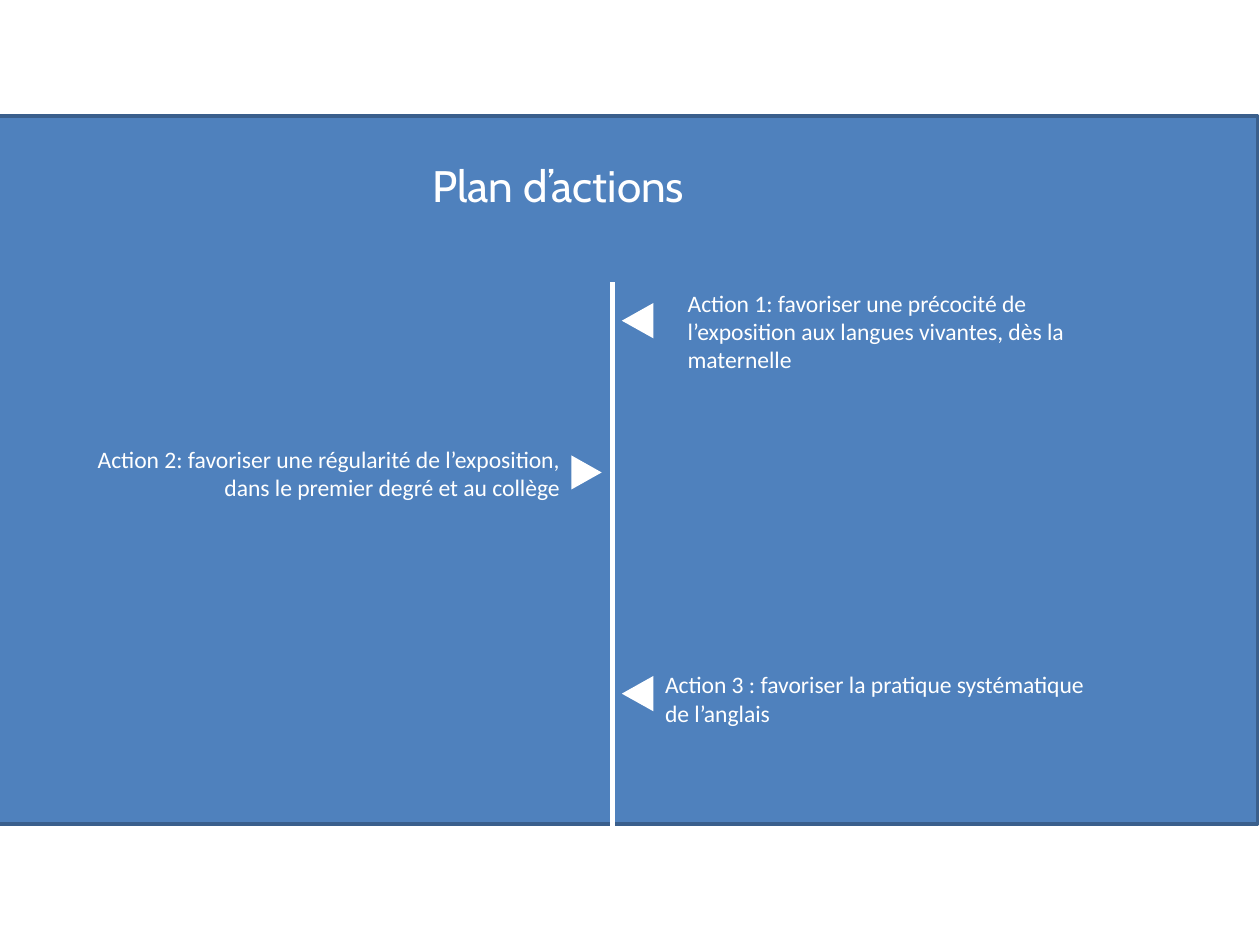
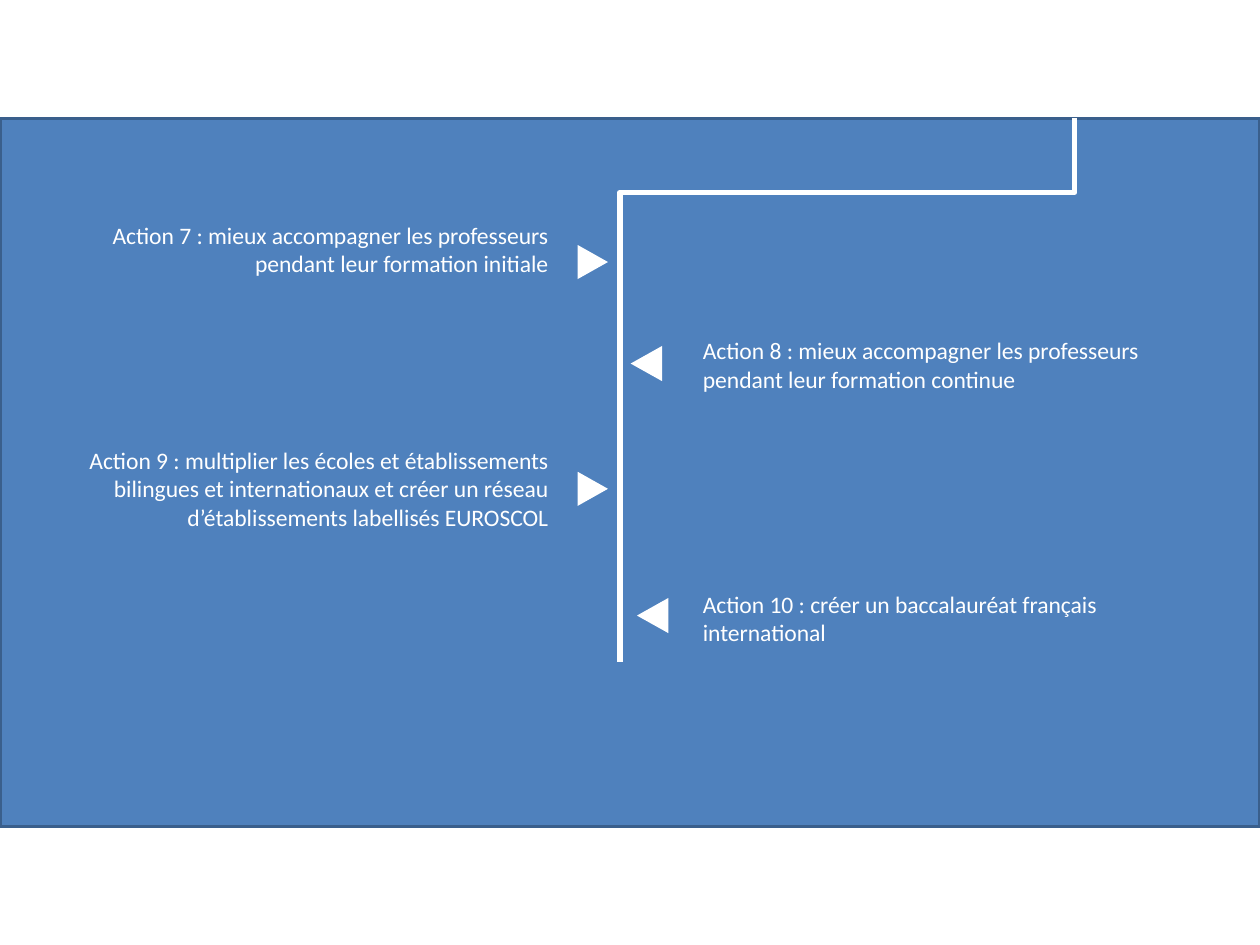
from dataclasses import dataclass

from lxml import etree
from pptx import Presentation
from pptx import util as u
from pptx.dml.color import RGBColor
from pptx.enum import shapes, text
from pptx.oxml.ns import qn

PX = 9144


@dataclass(frozen=True)
class Theme:
    """Colours, fonts and sizes shared by the slides."""
    panel: RGBColor = RGBColor(0x4F, 0x81, 0xBD)
    edge: RGBColor = RGBColor(0x3A, 0x5F, 0x8C)
    ink: RGBColor = RGBColor(0xFF, 0xFF, 0xFF)
    title_font: str = "Cabin"
    body_font: str = "Calibri"
    title_size: float = 25.2
    body_size: float = 13.5
    edge_width: int = 2
    spine_width: int = 3


class Timeline:
    """A deck of action timelines and the slide being drawn."""

    def __init__(self, theme):
        self.theme = theme
        self.deck = Presentation()
        self.deck.slide_width, self.deck.slide_height = 1000 * PX, 750 * PX
        self.page = None

    def start(self, left, top, titled=False):
        """Add a slide with its blue panel."""
        self.page = self.deck.slides.add_slide(self.deck.slide_layouts[5 if titled else 6])
        panel = self.shape(shapes.MSO_SHAPE.RECTANGLE, left, top, 1000, 562, self.theme.panel)
        panel.line.color.rgb = self.theme.edge
        panel.line.width = u.Pt(self.theme.edge_width)

    def shape(self, kind, left, top, width, height, fill):
        """Add a flat preset shape without outline."""
        item = self.page.shapes.add_shape(kind, left * PX, top * PX, width * PX, height * PX)
        item.shadow.inherit = False
        item.fill.solid()
        item.fill.fore_color.rgb = fill
        item.line.fill.background()
        return item

    def label(self, box, words, font, size, align):
        """Fill a text frame with one styled paragraph."""
        box.text_frame.word_wrap = True
        para = box.text_frame.paragraphs[0]
        para.alignment = align
        span = para.add_run()
        span.text = words
        span.font.name, span.font.size = font, u.Pt(size)
        span.font.color.rgb = self.theme.ink

    def title(self, words, left, top, width, height):
        """Place the title above the panel."""
        box = self.page.shapes.title
        box.left, box.top, box.width, box.height = (n * PX for n in (left, top, width, height))
        box.text_frame.vertical_anchor = text.MSO_ANCHOR.MIDDLE
        self.label(box, words, self.theme.title_font, self.theme.title_size, text.PP_ALIGN.CENTER)
        box.element.getparent().append(box.element)

    def spine(self, kind, *ends):
        """Draw a thick white connector."""
        line = self.page.shapes.add_connector(kind, *(n * PX for n in ends))
        line.line.color.rgb = self.theme.ink
        line.line.width = u.Pt(self.theme.spine_width)
        etree.SubElement(line.element.spPr, qn("a:effectLst"))
        return line

    def bent_spine(self, x1, y1, x2, y2, bend):
        """Draw a down, left, down spine that turns at the given share of its height."""
        across, down = x1 - x2, y2 - y1
        left, top = (x1 + x2 - down) // 2, (y1 + y2 - across) // 2
        line = self.spine(shapes.MSO_CONNECTOR.ELBOW, left, top, left + down, top + across)
        line.element.spPr.find(qn("a:xfrm")).set("rot", str(90 * 60000))
        geometry = line.element.spPr.find(qn("a:prstGeom"))
        for old in list(geometry):
            geometry.remove(old)
        guides = etree.SubElement(geometry, qn("a:avLst"))
        etree.SubElement(guides, qn("a:gd"), name="adj1", fmla=f"val {round(bend * 100000)}")

    def action(self, words, place, marker, on_right):
        """Add an action text and the triangle that points at the spine."""
        left, top, width, height = place
        box = self.page.shapes.add_textbox(left * PX, top * PX, width * PX, height * PX)
        align = text.PP_ALIGN.LEFT if on_right else text.PP_ALIGN.RIGHT
        self.label(box, words, self.theme.body_font, self.theme.body_size, align)
        size, turn = ((28, 25), 270) if on_right else ((27, 24), 90)
        triangle = self.shape(shapes.MSO_SHAPE.FLOWCHART_EXTRACT, *marker, *size, self.theme.ink)
        triangle.rotation = turn


def main():
    """Build both slides and save the deck."""
    plan = Timeline(Theme())

    plan.start(-2, 92, titled=True)
    plan.title("Plan d’actions", 38, 127, 810, 40)
    plan.spine(shapes.MSO_CONNECTOR.STRAIGHT, 486, 224, 486, 692)
    plan.action("Action 1: favoriser une précocité de l’exposition aux langues vivantes, dès la maternelle",
                (536, 224, 364, 78), (492, 242), True)
    plan.action("Action 2: favoriser une régularité de l’exposition, dans le premier degré et au collège",
                (67, 348, 387, 56), (452, 363), False)
    plan.action("Action 3 : favoriser la pratique systématique de l’anglais",
                (518, 527, 364, 56), (492, 538), True)

    plan.start(0, 94)
    plan.bent_spine(853, 94, 492, 525, 0.136)
    plan.action("Action 7 : mieux accompagner les professeurs pendant leur formation initiale",
                (41, 170, 404, 101), (457, 196), False)
    plan.action("Action 8 : mieux accompagner les professeurs pendant leur formation continue",
                (548, 262, 378, 56), (499, 276), True)
    plan.action("Action 9 : multiplier les écoles et établissements bilingues et internationaux "
                "et créer un réseau d’établissements labellisés EUROSCOL",
                (41, 349, 404, 78), (457, 376), False)
    plan.action("Action 10 : créer un baccalauréat français international",
                (548, 463, 378, 56), (504, 476), True)

    plan.deck.save("out.pptx")


if __name__ == "__main__":
    main()
